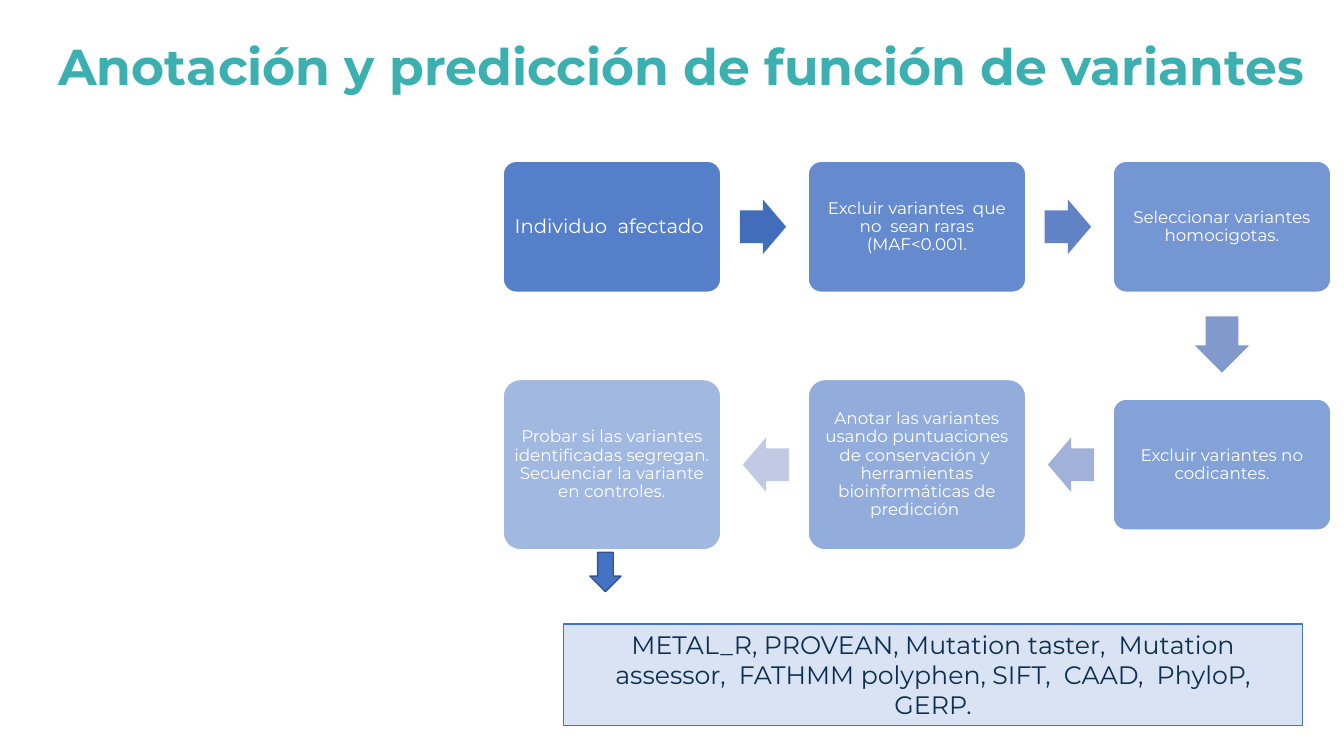
from lxml import etree
from pptx import Presentation
from pptx.dml.color import RGBColor
from pptx.enum.shapes import MSO_SHAPE as Preset
from pptx.enum.text import MSO_ANCHOR as Anchor, PP_ALIGN as Align
from pptx.oxml.ns import qn
from pptx.util import Inches, Pt

COLORS = {"blue": "4472C4", "edge": "325491", "panel": "DAE3F3",
          "navy": "0B2F51", "teal": "3CB0B0", "white": "FFFFFF"}

# Centres of the flow grid, in inches
FIRST_COL, COL_STEP = 6.07, 3.025
FIRST_ROW, ROW_STEP = 2.25, 2.36
STEP_WIDTH = 2.16

deck = Presentation()
deck.slide_width, deck.slide_height = Inches(13.33), Inches(7.5)
slide = deck.slides.add_slide(deck.slide_layouts[6])


def add_block(preset, center_x, center_y, width, height, fill, line=None, opacity=100):
    """Add a filled shape around its centre, in inches; opacity is in percent."""
    block = slide.shapes.add_shape(
        preset, Inches(center_x - width / 2), Inches(center_y - height / 2),
        Inches(width), Inches(height))
    block.shadow.inherit = False
    block.fill.solid()
    block.fill.fore_color.rgb = RGBColor.from_string(fill)
    if opacity < 100:
        color = block.fill._xPr.find(qn("a:solidFill"))[0]
        etree.SubElement(color, qn("a:alpha")).set("val", str(opacity * 1000))
    if line:
        block.line.color.rgb = RGBColor.from_string(line)
        block.line.width = Pt(1)
    else:
        block.line.fill.background()
    return block


def write(shape, text, size, color, bold=False, align=Align.CENTER,
          anchor=Anchor.TOP, inset=None, spacing=1.0, wrap=True):
    frame = shape.text_frame
    frame.word_wrap = wrap
    frame.vertical_anchor = anchor
    if inset is not None:
        frame.margin_left = frame.margin_right = Inches(inset)
        frame.margin_top = frame.margin_bottom = Inches(inset)
    paragraph = frame.paragraphs[0]
    paragraph.text = text
    paragraph.alignment = align
    paragraph.line_spacing = spacing
    font = paragraph.font
    font.name, font.size, font.bold = "Montserrat", Pt(size), bold
    font.color.rgb = RGBColor.from_string(color)


title = slide.shapes.add_textbox(Inches(0.48), Inches(0.3), Inches(12.86), Inches(0.71))
write(title, "Anotación y predicción de función de variantes", 36, COLORS["teal"],
      bold=True, align=Align.LEFT, wrap=False)

# Text, column, row, height, text size
steps = [
    ("Individuo  afectado ", 0, 0, 1.3, 14),
    ("Excluir variantes  que no  sean raras (MAF<0.001.", 1, 0, 1.3, 12),
    ("Seleccionar variantes homocigotas.", 2, 0, 1.3, 12),
    ("Excluir variantes no codicantes.", 2, 1, 1.3, 12),
    ("Anotar las variantes usando puntuaciones de conservación y  herramientas "
     "bioinformáticas de predicción ", 1, 1, 1.69, 12),
    ("Probar si las variantes identificadas segregan. Secuenciar la variante "
     "en controles.", 0, 1, 1.69, 12),
]
for order, (text, col, row, height, size) in enumerate(steps):
    step = add_block(Preset.ROUNDED_RECTANGLE, FIRST_COL + col * COL_STEP,
                     FIRST_ROW + row * ROW_STEP, STEP_WIDTH, height,
                     COLORS["blue"], COLORS["white"], opacity=90 - 8 * order)
    step.adjustments[0] = 0.1
    write(step, text, size, COLORS["white"], anchor=Anchor.MIDDLE,
          inset=0.05, spacing=0.9)

# Column and row of the arrow's centre, length, rotation, colour
arrows = [
    (0.495, 0, 0.46, 0, "416DBB"),
    (1.495, 0, 0.46, 0, "6182C5"),
    (2, 0.495, 0.56, 90, "8299CE"),
    (1.505, 1, 0.46, 180, "A2B1D9"),
    (0.505, 1, 0.46, 180, "C1C9E4"),
]
for col, row, length, rotation, fill in arrows:
    arrow = add_block(Preset.RIGHT_ARROW, FIRST_COL + col * COL_STEP,
                      FIRST_ROW + row * ROW_STEP, length, 0.54, fill)
    arrow.adjustments[0], arrow.adjustments[1] = 0.6, 0.5
    arrow.rotation = rotation

tools = add_block(Preset.RECTANGLE, 9.255, 6.695, 7.33, 1.01,
                  COLORS["panel"], COLORS["blue"])
write(tools, "METAL_R, PROVEAN, Mutation taster,  Mutation assessor,  "
      "FATHMM polyphen, SIFT,  CAAD,  PhyloP, GERP.", 18, COLORS["navy"])
add_block(Preset.DOWN_ARROW, 6.005, 5.675, 0.31, 0.39, COLORS["blue"], COLORS["edge"])

deck.save("out.pptx")
